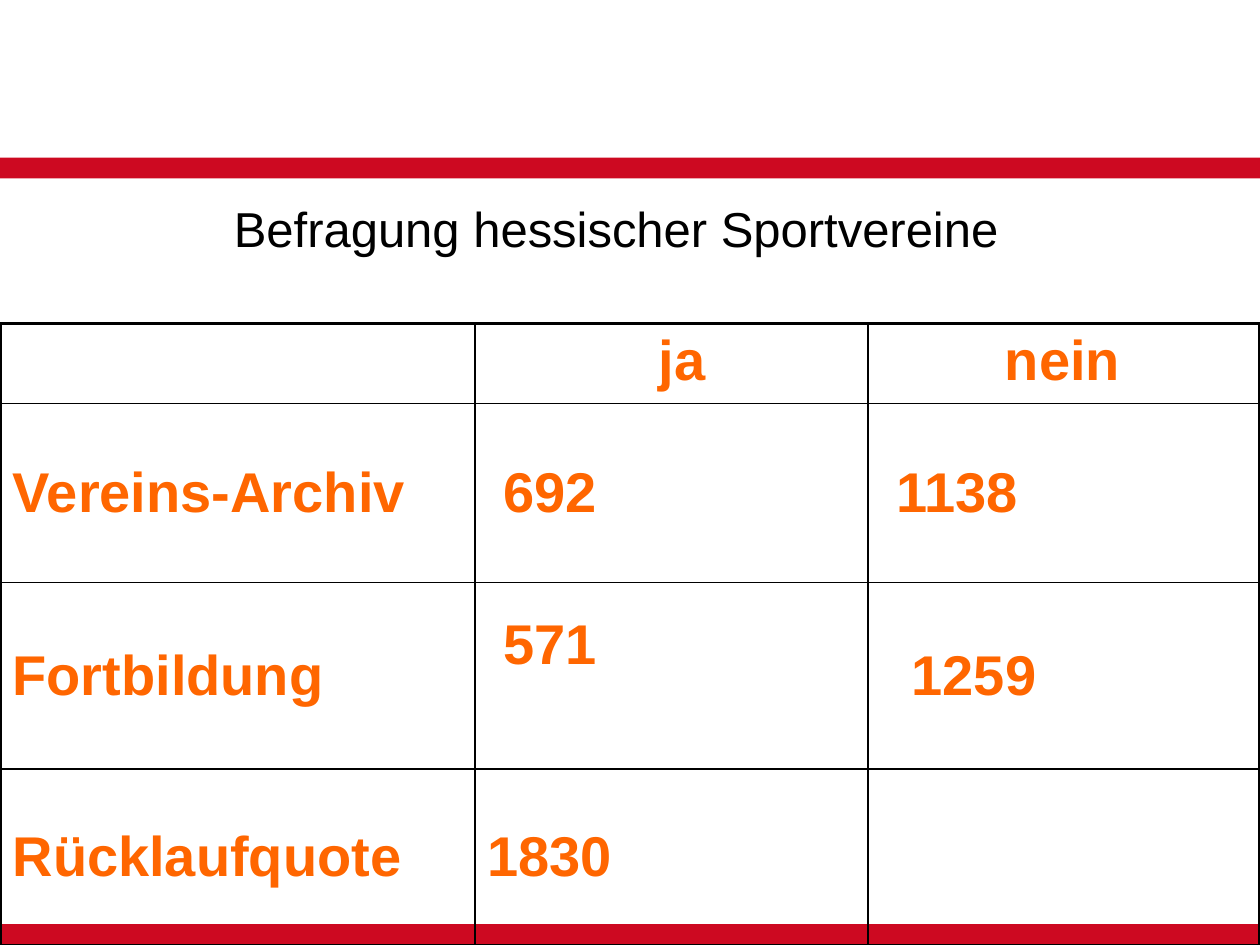
import pptx
import pptx.util
import pptx.dml.color
import pptx.enum.shapes
import pptx.enum.text
import pptx.oxml.ns
from lxml import etree

Pt = pptx.util.Pt
RGB = pptx.dml.color.RGBColor.from_string
ANCHOR = pptx.enum.text.MSO_ANCHOR

# Content
TITLE = "Befragung hessischer Sportvereine"
ROWS = [
    ["", "ja", "nein"],
    ["Vereins-Archiv", "692", "1138"],
    ["Fortbildung", "571", "1259"],
    ["Rücklaufquote", "1830", ""],
]

# Layout in points
WIDTH, HEIGHT = 720, 540
BAR_TOPS, BAR_HEIGHT = (90, 528), 12
TITLE_BOX = (31, 88.5, 642, 84)
TABLE_TOP = 185
COL_WIDTHS = [271.4, 224.6, 224]
ROW_HEIGHTS = [44.6, 102.2, 106.6, 101]
MARGIN_X, MARGIN_Y = 7.2, 3.6
INDENTS = {"ja": 97.8, "nein": 71.1, "692": 8.9, "1138": 8.9, "571": 8.9, "1259": 17.8}
RAISED = {"571": 35}  # extra bottom margin

THEME = {
    "font": "Arial", "title_size": 28, "cell_size": 32,
    "bar": "CD0921", "title": "000000", "cell": "FF6600",
    "border": "000000", "outer": 2.25, "inner": 1,
}


def set_font(p, size, color, bold=False):
    p.font.name = THEME["font"]
    p.font.size = Pt(size)
    p.font.bold = bold
    p.font.color.rgb = RGB(color)


def set_borders(cell, widths):
    tc_pr = cell._tc.get_or_add_tcPr()
    qn = pptx.oxml.ns.qn
    for side, width in widths.items():
        ln = etree.SubElement(tc_pr, qn("a:ln" + side), w=str(Pt(width)))
        fill = etree.SubElement(ln, qn("a:solidFill"))
        etree.SubElement(fill, qn("a:srgbClr"), val=THEME["border"])


prs = pptx.Presentation()
prs.slide_width, prs.slide_height = Pt(WIDTH), Pt(HEIGHT)
s = prs.slides.add_slide(prs.slide_layouts[6])

# Red bars
for top in BAR_TOPS:
    sp = s.shapes.add_shape(pptx.enum.shapes.MSO_SHAPE.RECTANGLE,
                            0, Pt(top), Pt(WIDTH), Pt(BAR_HEIGHT))
    sp.shadow.inherit = False
    sp.fill.solid()
    sp.fill.fore_color.rgb = RGB(THEME["bar"])
    sp.line.fill.background()

# Title
tf = s.shapes.add_textbox(*map(Pt, TITLE_BOX)).text_frame
tf.word_wrap = True
tf.vertical_anchor = ANCHOR.MIDDLE
p = tf.paragraphs[0]
p.text = TITLE
p.alignment = pptx.enum.text.PP_ALIGN.CENTER
set_font(p, THEME["title_size"], THEME["title"])

# Survey table
last_row, last_col = len(ROWS) - 1, len(COL_WIDTHS) - 1
table = s.shapes.add_table(len(ROWS), len(COL_WIDTHS), 0, Pt(TABLE_TOP),
                           Pt(sum(COL_WIDTHS)), Pt(sum(ROW_HEIGHTS))).table
table.first_row = table.horz_banding = False
for column, width in zip(table.columns, COL_WIDTHS):
    column.width = Pt(width)
for row, height in zip(table.rows, ROW_HEIGHTS):
    row.height = Pt(height)

for i, texts in enumerate(ROWS):
    for j, text in enumerate(texts):
        cell = table.cell(i, j)
        cell.margin_left = Pt(MARGIN_X + INDENTS.get(text, 0))
        cell.margin_right = Pt(MARGIN_X)
        cell.margin_top = Pt(MARGIN_Y)
        cell.margin_bottom = Pt(MARGIN_Y + RAISED.get(text, 0))
        cell.vertical_anchor = ANCHOR.MIDDLE if i else ANCHOR.TOP
        edges = {"L": j == 0, "R": j == last_col, "T": i == 0, "B": i == last_row}
        set_borders(cell, {side: THEME["outer" if on_edge else "inner"]
                           for side, on_edge in edges.items()})
        cell.fill.background()
        p = cell.text_frame.paragraphs[0]
        p.text = text
        set_font(p, THEME["cell_size"], THEME["cell"], bold=True)

prs.save("out.pptx")
